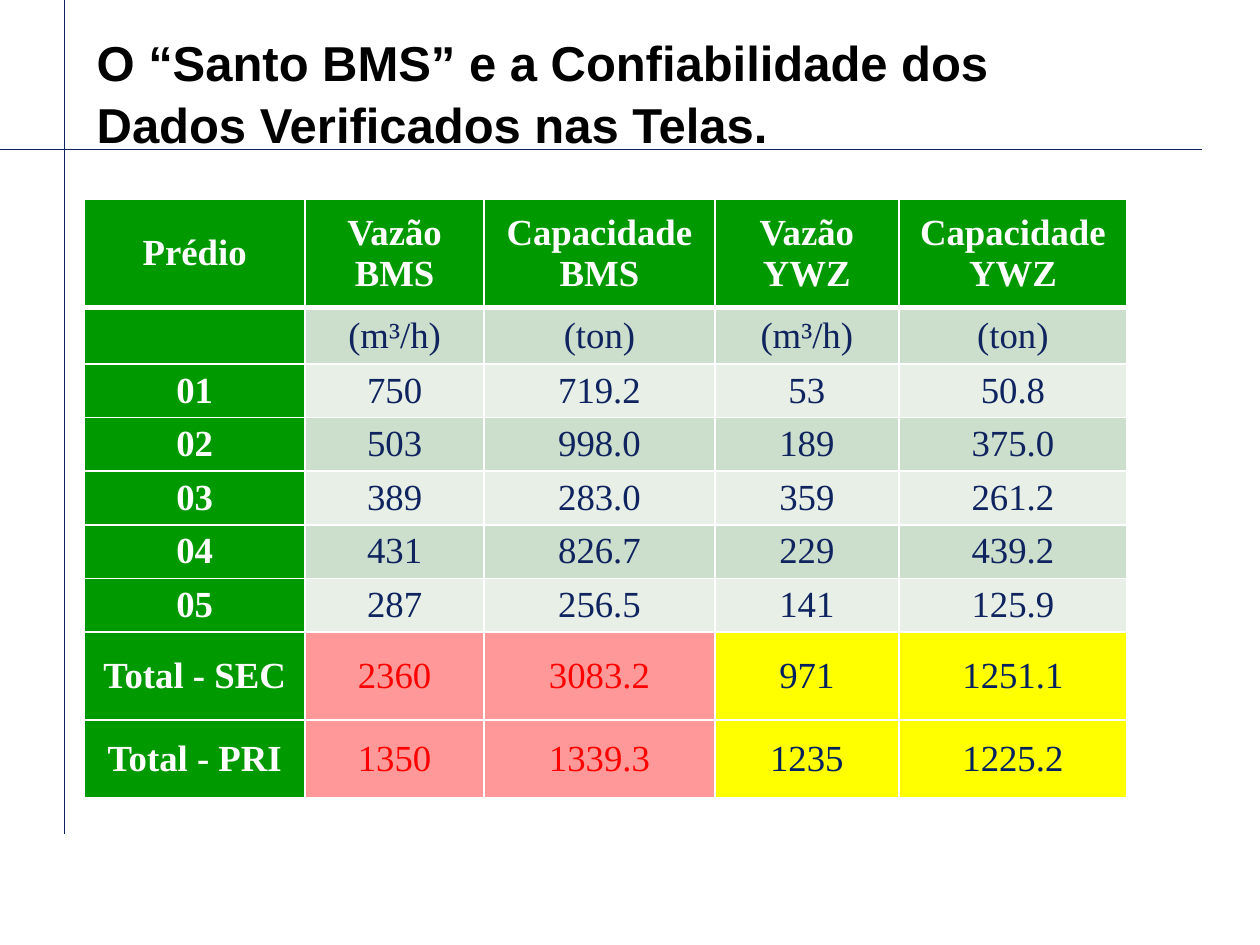
from dataclasses import dataclass

from lxml import etree
from pptx import Presentation
from pptx.dml.color import RGBColor
from pptx.enum.shapes import MSO_CONNECTOR
from pptx.enum.text import MSO_ANCHOR, PP_ALIGN
from pptx.oxml.ns import qn
from pptx.util import Cm, Pt

STRAIGHT = MSO_CONNECTOR.STRAIGHT
MIDDLE, TOP = MSO_ANCHOR.MIDDLE, MSO_ANCHOR.TOP
CENTER, LEFT = PP_ALIGN.CENTER, PP_ALIGN.LEFT


@dataclass(frozen=True)
class Theme:
    """Colours, fonts and sizes of the slide."""
    navy: str = "0F245F"
    total_navy: str = "002060"
    green: str = "009900"
    bands: tuple = ("CCDECC", "E7EFE7")
    pink: str = "FF9999"
    red: str = "FF0000"
    yellow: str = "FFFF00"
    white: str = "FFFFFF"
    black: str = "000000"
    title_font: str = "Arial"
    table_font: str = "Times New Roman"
    title_size: float = 28
    table_size: float = 21
    rule_width: float = 0.75
    border: float = 1
    header_border: float = 3


THEME = Theme()
TITLE = "O “Santo BMS” e a Confiabilidade dos\nDados Verificados nas Telas."
ROWS = [
    ("Prédio", "Vazão\nBMS", "Capacidade\nBMS", "Vazão\nYWZ", "Capacidade\nYWZ"),
    ("", "(m³/h)", "(ton)", "(m³/h)", "(ton)"),
    ("01", "750", "719.2", "53", "50.8"),
    ("02", "503", "998.0", "189", "375.0"),
    ("03", "389", "283.0", "359", "261.2"),
    ("04", "431", "826.7", "229", "439.2"),
    ("05", "287", "256.5", "141", "125.9"),
    ("Total - SEC", "2360", "3083.2", "971", "1251.1"),
    ("Total - PRI", "1350", "1339.3", "1235", "1225.2"),
]
COLUMN_WIDTHS = (4.45, 3.61, 4.65, 3.71, 4.6)
ROW_HEIGHTS = (2.18, 1.14, *[1.08] * 5, 1.78, 1.57)


def style_text(frame, font, size, color, bold, align):
    """Format every paragraph and run of a text frame."""
    for paragraph in frame.paragraphs:
        paragraph.alignment = align
        for run in paragraph.runs:
            run.font.name = font
            run.font.size = Pt(size)
            run.font.bold = bold
            run.font.color.rgb = RGBColor.from_string(color)


def add_rule(slide, x1, y1, x2, y2):
    """Draw one thin navy rule without a shadow."""
    rule = slide.shapes.add_connector(STRAIGHT, Cm(x1), Cm(y1), Cm(x2), Cm(y2))
    rule.line.color.rgb = RGBColor.from_string(THEME.navy)
    rule.line.width = Pt(THEME.rule_width)
    etree.SubElement(rule._element.spPr, qn("a:effectLst"))


def add_frame_rules(slide, cross_x, cross_y, right, bottom):
    """Draw the two rules that cross at the upper left."""
    add_rule(slide, cross_x, bottom, cross_x, 0)
    add_rule(slide, 0, cross_y, right, cross_y)


def add_title(slide, left, top, width, height):
    """Place the two-line title in its box."""
    frame = slide.shapes.add_textbox(Cm(left), Cm(top), Cm(width), Cm(height)).text_frame
    frame.word_wrap = True
    frame.vertical_anchor = TOP
    frame.margin_top = Cm(0.23)
    frame.text = TITLE
    style_text(frame, THEME.title_font, THEME.title_size, THEME.black, True, LEFT)
    frame.paragraphs[1].space_before = Pt(1.5)


def cell_colors(row, column):
    """Return the fill and text colours for a table position."""
    if row == 0 or column == 0:
        return THEME.green, THEME.white
    if row >= len(ROWS) - 2:
        return (THEME.pink, THEME.red) if column < 3 else (THEME.yellow, THEME.total_navy)
    return THEME.bands[(row - 1) % 2], THEME.navy


def set_borders(cell, row):
    """Give a cell white borders, heavier below the header."""
    widths = {
        "a:lnL": THEME.border,
        "a:lnR": THEME.border,
        "a:lnT": THEME.header_border if row == 1 else THEME.border,
        "a:lnB": THEME.header_border if row == 0 else THEME.border,
    }
    properties = cell._tc.get_or_add_tcPr()
    for side, width in widths.items():
        line = etree.SubElement(properties, qn(side), w=str(Pt(width)))
        fill = etree.SubElement(line, qn("a:solidFill"))
        etree.SubElement(fill, qn("a:srgbClr"), val=THEME.white)


def fill_cell(cell, row, column):
    """Write and format one cell of the table."""
    fill_color, text_color = cell_colors(row, column)
    set_borders(cell, row)
    cell.fill.solid()
    cell.fill.fore_color.rgb = RGBColor.from_string(fill_color)
    cell.vertical_anchor = MIDDLE
    cell.margin_left = cell.margin_right = Cm(0.13)
    cell.margin_top = cell.margin_bottom = 0
    cell.text_frame.text = ROWS[row][column]
    style_text(cell.text_frame, THEME.table_font, THEME.table_size, text_color,
               row == 0 or column == 0, CENTER)


def add_comparison(slide, left, top):
    """Place the table comparing readings building by building."""
    comparison = slide.shapes.add_table(
        len(ROWS), len(COLUMN_WIDTHS), Cm(left), Cm(top),
        Cm(sum(COLUMN_WIDTHS)), Cm(sum(ROW_HEIGHTS))).table
    for column, width in zip(comparison.columns, COLUMN_WIDTHS):
        column.width = Cm(width)
    for row, height in zip(comparison.rows, ROW_HEIGHTS):
        row.height = Cm(height)
    for row in range(len(ROWS)):
        for column in range(len(COLUMN_WIDTHS)):
            fill_cell(comparison.cell(row, column), row, column)


def main():
    """Build the slide and save it."""
    deck = Presentation()
    deck.slide_width, deck.slide_height = Cm(25.4), Cm(19.05)
    slide = deck.slides.add_slide(deck.slide_layouts[6])
    add_frame_rules(slide, cross_x=1.3, cross_y=3.02, right=24.23, bottom=16.81)
    add_comparison(slide, left=1.7, top=4.02)
    add_title(slide, left=1.7, top=0.43, width=20.09, height=2.59)
    deck.save("out.pptx")


if __name__ == "__main__":
    main()
